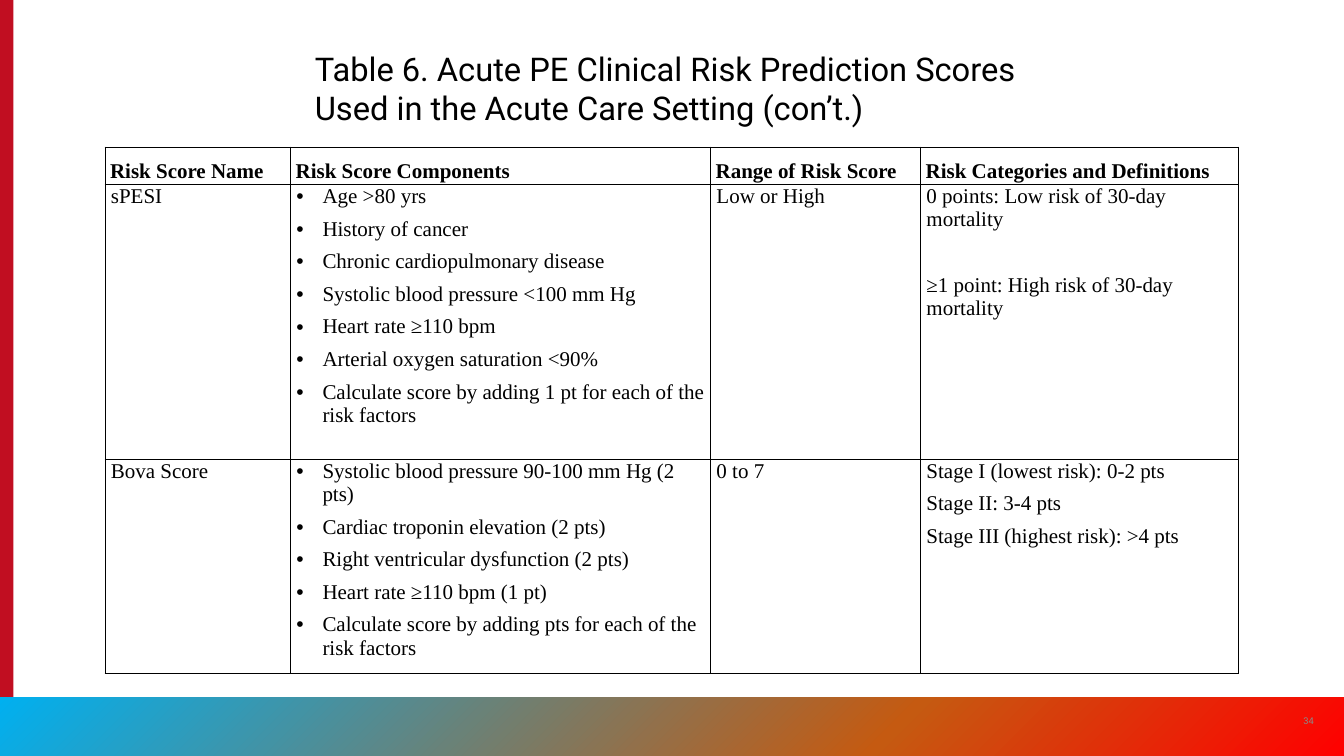
from lxml.etree import SubElement
from pptx import Presentation
from pptx.dml.color import RGBColor
from pptx.enum.shapes import MSO_SHAPE as Preset
from pptx.enum.text import MSO_ANCHOR as Anchor, PP_ALIGN as Align
from pptx.oxml import parse_xml
from pptx.oxml.ns import nsdecls, qn
from pptx.util import Inches, Pt

BLACK, GREY, RED = "000000", "8A8B8A", "C10E21"
BAND_STOPS = [(0, "00B0F0"), (66, "C55A11"), (100, "FF0000")]
COLUMN_WIDTHS = [2.21, 5, 2.5, 3.79]
ROW_HEIGHTS = [0.44, 3.27, 2.55]
BULLET_COLUMN = 1
GROUP_GAP = 28
RISK_SCORES = [
    [["Risk Score Name"], ["Risk Score Components"], ["Range of Risk Score"],
     ["Risk Categories and Definitions"]],
    [["sPESI"],
     ["Age >80 yrs", "History of cancer", "Chronic cardiopulmonary disease",
      "Systolic blood pressure <100 mm Hg", "Heart rate ≥110 bpm",
      "Arterial oxygen saturation <90%",
      "Calculate score by adding 1 pt for each of the risk factors"],
     ["Low or High"],
     ["0 points: Low risk of 30-day mortality", "≥1 point: High risk of 30-day mortality"]],
    [["Bova Score"],
     ["Systolic blood pressure 90-100 mm Hg (2 pts)", "Cardiac troponin elevation (2 pts)",
      "Right ventricular dysfunction (2 pts)", "Heart rate ≥110 bpm (1 pt)",
      "Calculate score by adding pts for each of the risk factors"],
     ["0 to 7"],
     ["Stage I (lowest risk): 0-2 pts", "Stage II: 3-4 pts", "Stage III (highest risk): >4 pts"]],
]


def color(value):
    """Turn a hex string into a colour."""
    return RGBColor.from_string(value)


def set_font(paragraph, name, size, value, bold=False):
    """Set the font of a whole paragraph."""
    font = paragraph.font
    font.name, font.size, font.bold = name, Pt(size), bold
    font.color.rgb = color(value)


def add_bar(slide, left, top, width, height, fill):
    """Add a borderless bar of one colour."""
    shape = slide.shapes.add_shape(
        Preset.RECTANGLE, Inches(left), Inches(top), Inches(width), Inches(height))
    shape.shadow.inherit = False
    shape.fill.solid()
    shape.fill.fore_color.rgb = color(fill)
    shape.line.fill.background()
    return shape


def add_gradient_band(slide, left, top, width, height):
    """Add the footer band with its diagonal gradient."""
    shape = add_bar(slide, left, top, width, height, RED)
    stops = "".join(
        f'<a:gs pos="{position * 1000}"><a:srgbClr val="{value}"/></a:gs>'
        for position, value in BAND_STOPS)
    gradient = parse_xml(
        f'<a:gradFill {nsdecls("a")} rotWithShape="1"><a:gsLst>{stops}</a:gsLst>'
        '<a:lin ang="2700000" scaled="0"/></a:gradFill>')
    properties = shape.element.spPr
    properties.replace(properties.find(qn("a:solidFill")), gradient)


def add_text(slide, left, top, width, height, text, size, value):
    """Add a wrapped text box with one paragraph."""
    box = slide.shapes.add_textbox(Inches(left), Inches(top), Inches(width), Inches(height))
    frame = box.text_frame
    frame.word_wrap = True
    frame.text = text
    set_font(frame.paragraphs[0], "Roboto", size, value)
    return frame


def add_page_number(slide, left, top, size, text):
    """Add the page number centred in a square box."""
    frame = add_text(slide, left, top, size, size, text, 8, GREY)
    frame.vertical_anchor = Anchor.MIDDLE
    frame.paragraphs[0].alignment = Align.CENTER


def add_borders(cell):
    """Draw a thin black line on every side of a cell."""
    properties = cell._tc.get_or_add_tcPr()
    for side in ("lnL", "lnR", "lnT", "lnB"):
        line = SubElement(properties, qn(f"a:{side}"), w=str(Pt(1)))
        fill = SubElement(line, qn("a:solidFill"))
        SubElement(fill, qn("a:srgbClr"), val=BLACK)


def add_bullet(paragraph):
    """Give a paragraph a hanging round bullet."""
    properties = paragraph._p.get_or_add_pPr()
    indent = Inches(0.31)
    properties.set("marL", str(indent))
    properties.set("indent", str(-indent))
    SubElement(properties, qn("a:buFont"), typeface="Arial")
    SubElement(properties, qn("a:buChar"), char="•")


def fill_cell(cell, lines, header, bulleted):
    """Write the lines of one table cell and style it."""
    add_borders(cell)
    cell.fill.background()
    cell.margin_left = cell.margin_right = Inches(0.06 if header else 0.07)
    cell.margin_top = cell.margin_bottom = 0
    cell.vertical_anchor = Anchor.MIDDLE if header else Anchor.TOP
    cell.text = "\n".join(lines)
    for paragraph in cell.text_frame.paragraphs:
        paragraph.space_after = Pt(8)
        if header:
            paragraph.line_spacing = 1.5
        if paragraph.text.startswith("≥1 point"):
            paragraph.space_before = Pt(GROUP_GAP)
        if bulleted:
            add_bullet(paragraph)
        set_font(paragraph, "Times New Roman", 18, BLACK, header)


def add_score_table(slide, left, top):
    """Add the table of risk scores."""
    table = slide.shapes.add_table(
        len(ROW_HEIGHTS), len(COLUMN_WIDTHS), Inches(left), Inches(top),
        Inches(sum(COLUMN_WIDTHS)), Inches(sum(ROW_HEIGHTS))).table
    table.horz_banding = table.first_row = False
    for column, width in zip(table.columns, COLUMN_WIDTHS):
        column.width = Inches(width)
    for row_index, (row, height) in enumerate(zip(table.rows, ROW_HEIGHTS)):
        row.height = Inches(height)
        header = row_index == 0
        for column_index, lines in enumerate(RISK_SCORES[row_index]):
            bulleted = column_index == BULLET_COLUMN and not header
            fill_cell(table.cell(row_index, column_index), lines, header, bulleted)


def main():
    """Build the slide and save it."""
    presentation = Presentation()
    presentation.slide_width, presentation.slide_height = Inches(16), Inches(9)
    slide = presentation.slides.add_slide(presentation.slide_layouts[6])
    add_bar(slide, 0, 0, 0.16, 9, RED)
    add_gradient_band(slide, 0, 8.3, 16, 0.7)
    add_page_number(slide, 15.34, 8.34, 0.48, "34")
    add_text(slide, 3.65, 0.53, 8.7, 1.04,
             "Table 6. Acute PE Clinical Risk Prediction Scores "
             "Used in the Acute Care Setting (con’t.)", 28, BLACK)
    add_score_table(slide, 1.25, 1.75)
    presentation.save("out.pptx")


if __name__ == "__main__":
    main()
